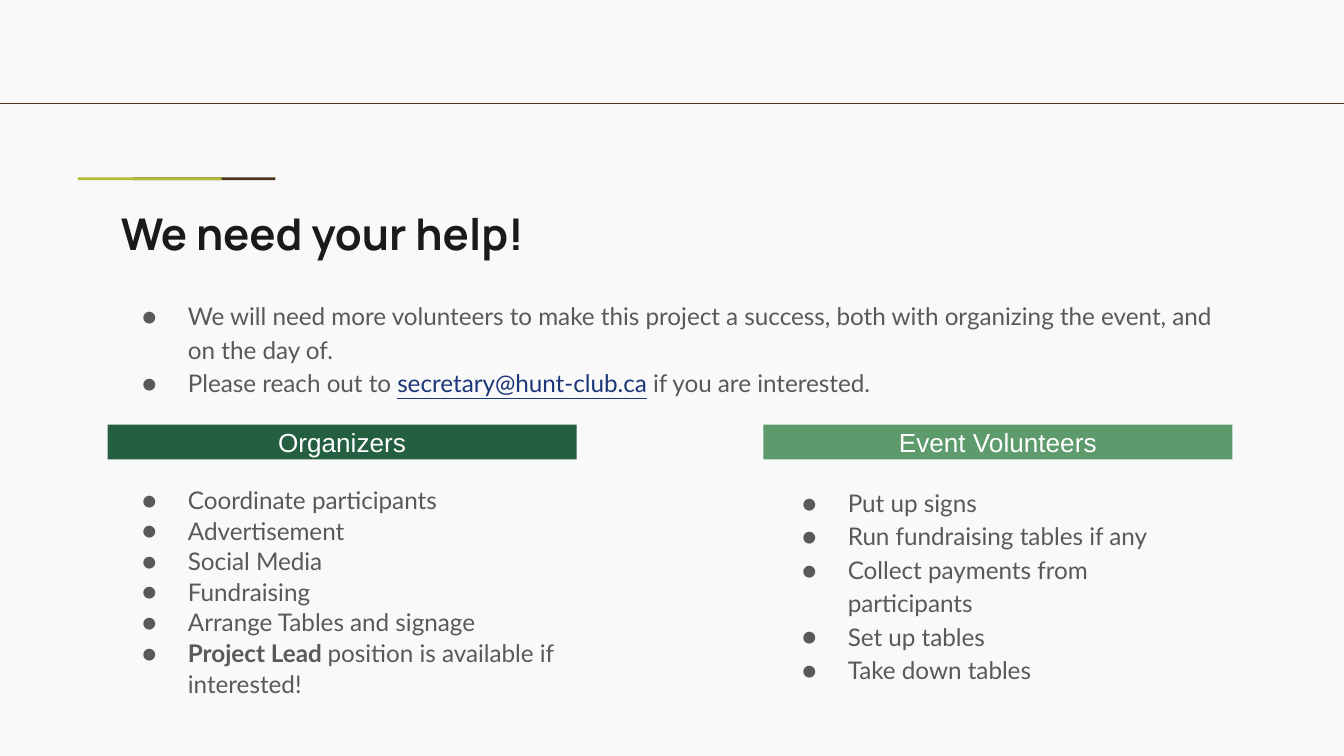
from dataclasses import dataclass

from lxml.etree import SubElement
from pptx import Presentation
from pptx.dml.color import RGBColor
from pptx.enum.shapes import MSO_CONNECTOR, MSO_SHAPE
from pptx.enum.text import MSO_ANCHOR, MSO_AUTO_SIZE, PP_ALIGN
from pptx.oxml.ns import qn
from pptx.slide import Slide
from pptx.text.text import TextFrame, _Paragraph
from pptx.util import Inches, Pt

COLORS = {
    "background": "F9F9F9",
    "brown": "4A321A",
    "lime": "B4BC35",
    "title": "1A1A1A",
    "body": "595959",
    "link": "1C3678",
    "dark_green": "235F40",
    "light_green": "5D9B6D",
    "white": "FFFFFF",
}
LEFT = 0.8
FULL_W = 8.41
COLUMN_W = 3.49
BODY_SIZE = 13


@dataclass(frozen=True)
class Span:
    text: str
    color: str = "body"
    bold: bool = False
    underline: bool = False


@dataclass(frozen=True)
class Box:
    x: float
    y: float
    w: float
    h: float

    def lengths(self) -> list[int]:
        return [Inches(v) for v in (self.x, self.y, self.w, self.h)]


@dataclass(frozen=True)
class Bar:
    box: Box
    color: str
    label: str = ""


@dataclass(frozen=True)
class BulletList:
    box: Box
    spacing: float
    items: list[list[Span]]


ACCENTS = [
    Bar(Box(0.99, 1.32, 1.06, 0.02), "brown"),
    Bar(Box(0.58, 1.32, 1.07, 0.02), "lime"),
]
HEADINGS = [
    Bar(Box(LEFT, 3.16, COLUMN_W, 0.26), "dark_green", "Organizers"),
    Bar(Box(5.68, 3.16, COLUMN_W, 0.26), "light_green", "Event Volunteers"),
]

LISTS = [
    BulletList(Box(LEFT, 2.11, FULL_W, 0.97), 1.15, [
        [Span("We will need more volunteers to make this project a success, "
              "both with organizing the event, and on the day of.")],
        [Span("Please reach out to "),
         Span("secretary@hunt-club.ca", "link", underline=True),
         Span(" if you are interested.")],
    ]),
    BulletList(Box(LEFT, 3.5, COLUMN_W, 1.79), 1.05, [
        [Span("Coordinate participants")],
        [Span("Advertisement")],
        [Span("Social Media")],
        [Span("Fundraising")],
        [Span("Arrange Tables and signage")],
        [Span("Project Lead ", bold=True),
         Span("position is available if interested!")],
    ]),
    BulletList(Box(5.71, 3.5, 3.45, 1.79), 1.15, [
        [Span("Put up signs")],
        [Span("Run fundraising tables if any")],
        [Span("Collect payments from participants")],
        [Span("Set up tables")],
        [Span("Take down tables")],
    ]),
]


def rgb(name: str) -> RGBColor:
    return RGBColor.from_string(COLORS[name])


def format_frame(tf: TextFrame, anchor: MSO_ANCHOR = MSO_ANCHOR.TOP) -> None:
    margins = {f"margin_{side}": Inches(0.1)
               for side in ("left", "top", "right", "bottom")}
    values = {"word_wrap": True, "auto_size": MSO_AUTO_SIZE.NONE,
              "vertical_anchor": anchor, **margins}
    for name, value in values.items():
        setattr(tf, name, value)


def add_span(p: _Paragraph, span: Span, font: str, size: float) -> None:
    r = p.add_run()
    r.text = span.text
    values = {"name": font, "size": Pt(size), "bold": span.bold,
              "underline": span.underline}
    for name, value in values.items():
        setattr(r.font, name, value)
    r.font.color.rgb = rgb(span.color)


def add_bullet(p: _Paragraph) -> None:
    pPr = p._p.get_or_add_pPr()
    pPr.set("marL", str(Inches(0.5)))
    pPr.set("indent", str(Inches(-0.34)))
    color = SubElement(pPr, qn("a:buClr"))
    SubElement(color, qn("a:srgbClr")).set("val", COLORS["body"])
    SubElement(pPr, qn("a:buSzPts")).set("val", str(BODY_SIZE * 100))
    SubElement(pPr, qn("a:buFont")).set("typeface", "Lato")
    SubElement(pPr, qn("a:buChar")).set("char", "●")


def add_title(s: Slide, text: str, box: Box) -> None:
    title = s.shapes.title
    title.left, title.top, title.width, title.height = box.lengths()
    format_frame(title.text_frame)
    p = title.text_frame.paragraphs[0]
    p.alignment = PP_ALIGN.LEFT
    add_span(p, Span(text, "title", bold=True), "Manrope", 23.4)


def add_rule(s: Slide, y: float, length: float) -> None:
    line = s.shapes.add_connector(MSO_CONNECTOR.STRAIGHT, Inches(0), Inches(y),
                                  Inches(length), Inches(y))
    line.line.color.rgb = rgb("brown")
    line.line.width = Pt(0.75)
    SubElement(line._element.spPr, qn("a:effectLst"))


def add_bar(s: Slide, bar: Bar) -> None:
    sp = s.shapes.add_shape(MSO_SHAPE.RECTANGLE, *bar.box.lengths())
    sp.shadow.inherit = False
    sp.fill.solid()
    sp.fill.fore_color.rgb = rgb(bar.color)
    sp.line.fill.background()
    if bar.label:
        format_frame(sp.text_frame, MSO_ANCHOR.MIDDLE)
        p = sp.text_frame.paragraphs[0]
        p.alignment = PP_ALIGN.CENTER
        add_span(p, Span(bar.label, "white"), "Arial", 14)


def add_list(s: Slide, bullets: BulletList) -> None:
    tf = s.shapes.add_textbox(*bullets.box.lengths()).text_frame
    format_frame(tf)
    for i, spans in enumerate(bullets.items):
        p = tf.add_paragraph() if i else tf.paragraphs[0]
        add_bullet(p)
        p.line_spacing = bullets.spacing
        for span in spans:
            add_span(p, span, "Lato", BODY_SIZE)


def main() -> None:
    prs = Presentation()
    prs.slide_width = Inches(10)
    prs.slide_height = prs.slide_width * 9 // 16
    s = prs.slides.add_slide(prs.slide_layouts[5])
    s.background.fill.solid()
    s.background.fill.fore_color.rgb = rgb("background")

    for accent in ACCENTS:
        add_bar(s, accent)
    add_rule(s, 0.77, 10.02)
    add_title(s, "We need your help!", Box(LEFT, 1.44, FULL_W, 0.59))
    for bullets in LISTS:
        add_list(s, bullets)
    for heading in HEADINGS:
        add_bar(s, heading)
    prs.save("out.pptx")


if __name__ == "__main__":
    main()
